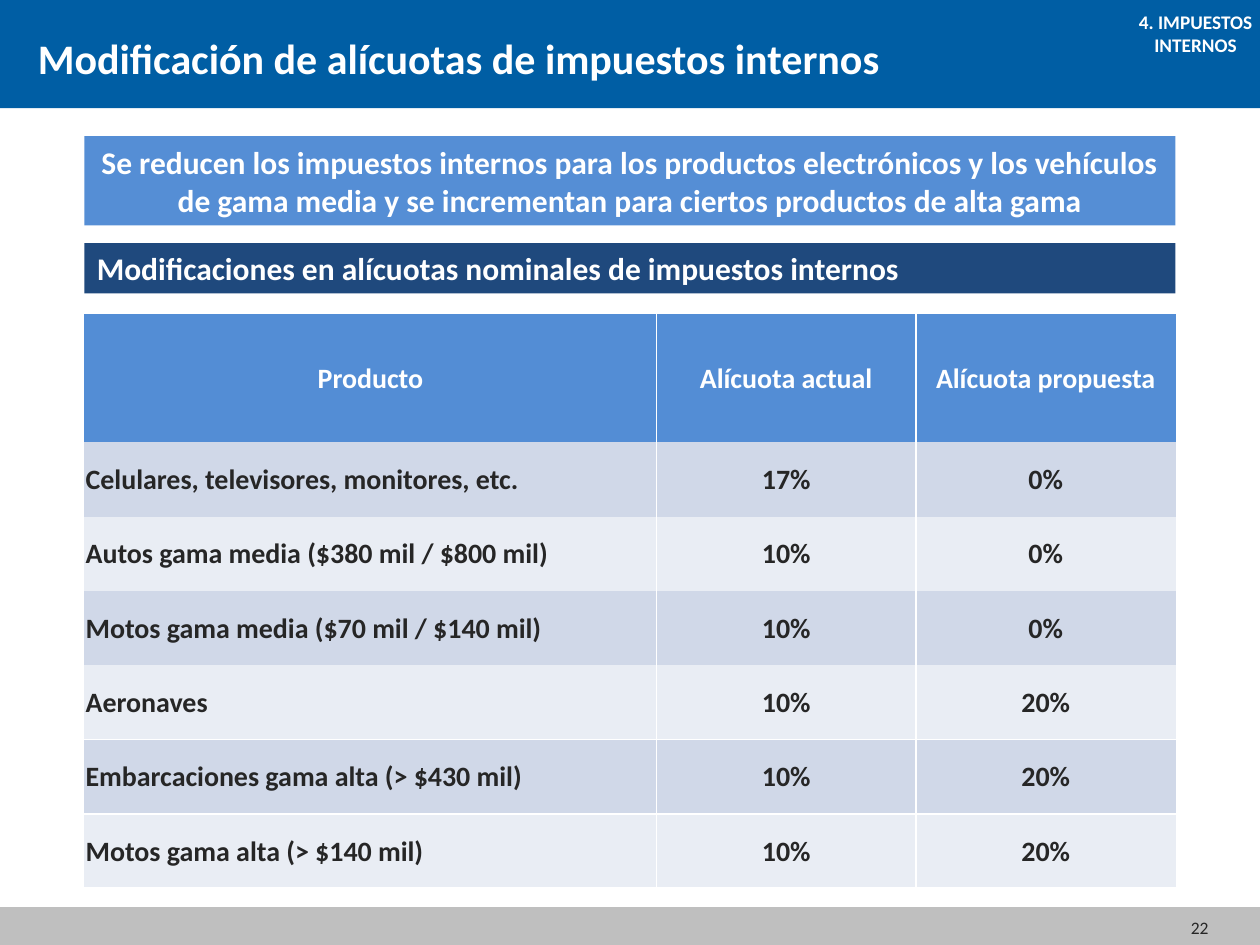
"""Builds the slide on changes to internal tax rates."""
import pptx
import pptx.util
import pptx.dml.color
import pptx.enum.shapes
import pptx.enum.text
import pptx.oxml
import pptx.oxml.ns

Inches = pptx.util.Inches
ALIGN = pptx.enum.text.PP_ALIGN
ANCHOR = pptx.enum.text.MSO_ANCHOR
WHITE, DARK, BLUE = "FFFFFF", "262626", "538DD5"
BANDS = ["D0D8E8", "E9EDF4"]
PLAIN = "{2D5ABB26-0587-4C30-8999-92F81FD0307C}"

TITLE = "Modificación de alícuotas de impuestos internos"
TAG = "4. IMPUESTOS INTERNOS"
BARS = [
    ((0, 0, 10, 0.86), "005EA4"),
    ((0, 7.21, 10, 0.29), "BFBFBF"),
]
BOXES = [
    ((0.67, 1.93, 8.66, 0.4), "1F497D", ALIGN.LEFT,
     "Modificaciones en alícuotas nominales de impuestos internos"),
    ((0.67, 1.08, 8.66, 0.71), "558ED5", ALIGN.CENTER,
     "Se reducen los impuestos internos para los productos electrónicos y los vehículos "
     "de gama media y se incrementan para ciertos productos de alta gama"),
]
ROWS = [
    ("Producto", "Alícuota actual", "Alícuota propuesta"),
    ("Celulares, televisores, monitores, etc.", "17%", "0%"),
    ("Autos gama media ($380 mil / $800 mil)", "10%", "0%"),
    ("Motos gama media ($70 mil / $140 mil)", "10%", "0%"),
    ("Aeronaves", "10%", "20%"),
    ("Embarcaciones gama alta (> $430 mil)", "10%", "20%"),
    ("Motos gama alta (> $140 mil)", "10%", "20%"),
]
WIDTHS = [4.54, 2.06, 2.06]
HEIGHTS = [1.02] + [0.59] * 6
RULED = 4


def color(code):
    return pptx.dml.color.RGBColor.from_string(code)


def paint(item, code):
    item.fill.solid()
    item.fill.fore_color.rgb = color(code)


def write(frame, text, size=18, ink=WHITE, bold=True, align=ALIGN.LEFT, anchor=ANCHOR.MIDDLE):
    frame.text = text
    frame.word_wrap = True
    frame.vertical_anchor = anchor
    para = frame.paragraphs[0]
    para.alignment = align
    font = para.runs[0].font
    font.name, font.size, font.bold = "Calibri", pptx.util.Pt(size), bold
    font.color.rgb = color(ink)


def rect(slide, place, fill, line=None):
    shape = slide.shapes.add_shape(
        pptx.enum.shapes.MSO_SHAPE.RECTANGLE, *map(Inches, place))
    shape.shadow.inherit = False
    paint(shape, fill)
    if line:
        shape.line.color.rgb = color(line)
        shape.line.width = pptx.util.Pt(2)
    else:
        shape.line.fill.background()
    return shape


def label(slide, place, text, **style):
    box = slide.shapes.add_textbox(*map(Inches, place))
    write(box.text_frame, text, **style)


def edge(cell, sides):
    props = cell._tc.get_or_add_tcPr()
    for spot, side in enumerate(sides):
        props.insert(spot, pptx.oxml.parse_xml(
            f'<a:ln{side} {pptx.oxml.ns.nsdecls("a")} w="12700"><a:solidFill>'
            f'<a:srgbClr val="{WHITE}"/></a:solidFill></a:ln{side}>'))


def sides(row, col):
    last = len(WIDTHS) - 1
    rules = [("L", col > 0), ("R", col < last), ("T", row > RULED), ("B", row >= RULED)]
    return [side for side, drawn in rules if drawn]


def grid(slide):
    table = slide.shapes.add_table(
        len(ROWS), len(WIDTHS), Inches(0.67), Inches(2.49),
        Inches(sum(WIDTHS)), Inches(sum(HEIGHTS))).table
    table._tbl.tblPr.find(pptx.oxml.ns.qn("a:tableStyleId")).text = PLAIN
    for col, width in enumerate(WIDTHS):
        table.columns[col].width = Inches(width)
    for row, texts in enumerate(ROWS):
        table.rows[row].height = Inches(HEIGHTS[row])
        for col, text in enumerate(texts):
            cell = table.cell(row, col)
            write(cell.text_frame, text, size=16, ink=DARK if row else WHITE,
                  align=ALIGN.LEFT if row and not col else ALIGN.CENTER)
            cell.vertical_anchor = ANCHOR.MIDDLE
            cell.margin_left = cell.margin_right = cell.margin_top = Inches(0.01)
            cell.margin_bottom = 0
            paint(cell, BANDS[(row - 1) % 2] if row else BLUE)
            edge(cell, sides(row, col))


def main():
    deck = pptx.Presentation()
    deck.slide_width, deck.slide_height = Inches(10), Inches(7.5)
    slide = deck.slides.add_slide(deck.slide_layouts[5])
    for place, fill in BARS:
        rect(slide, place, fill, line=fill if place[1] else None)
    label(slide, (7.36, 7.16, 2.33, 0.4), "22", size=10, ink=DARK, bold=False, align=ALIGN.RIGHT)

    title = slide.shapes.title
    title.left, title.top, title.width, title.height = map(Inches, (0.2, 0.21, 9.06, 0.5))
    write(title.text_frame, TITLE, size=24, anchor=ANCHOR.TOP)
    title.element.getparent().append(title.element)

    grid(slide)
    for place, fill, align, text in BOXES:
        write(rect(slide, place, fill).text_frame, text, align=align)
    label(slide, (8.86, 0.03, 1.26, 0.47), TAG, size=11, align=ALIGN.CENTER, anchor=ANCHOR.TOP)
    deck.save("out.pptx")


if __name__ == "__main__":
    main()
